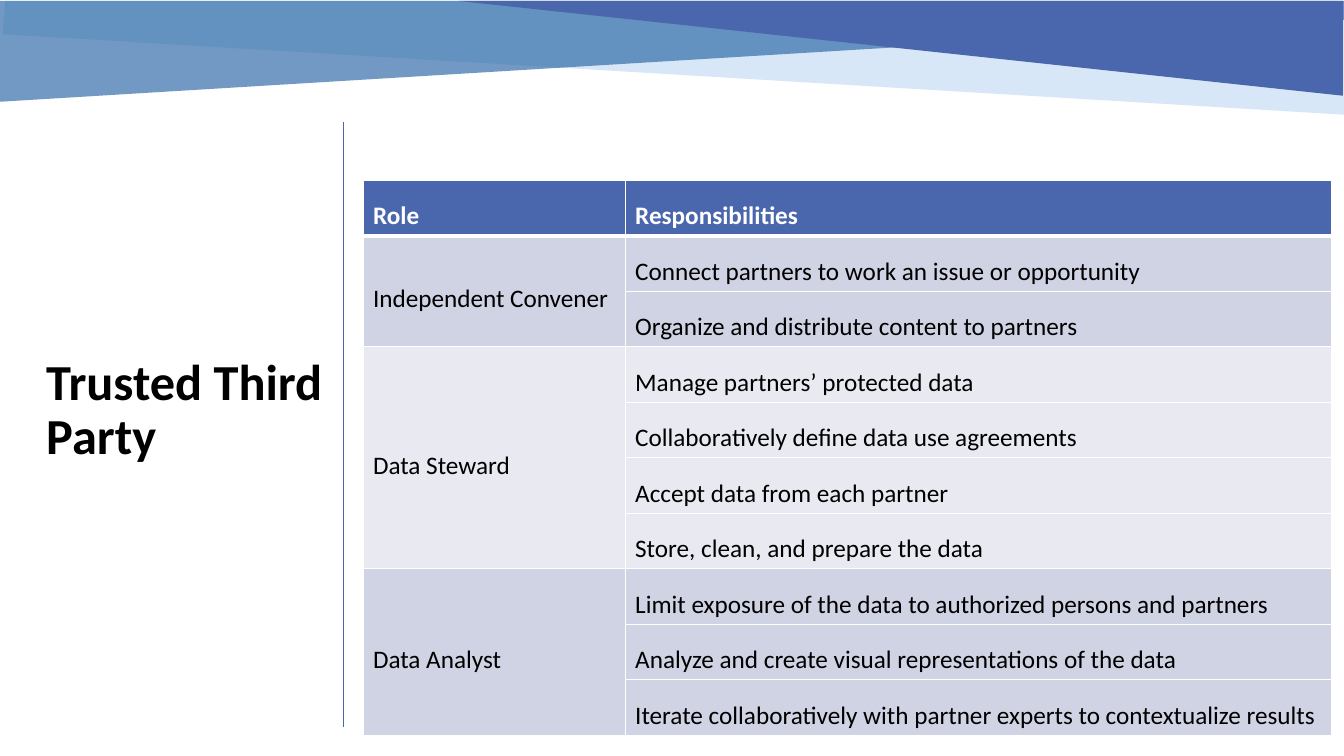
from dataclasses import dataclass

from lxml import etree
from pptx import Presentation
from pptx import util as u
from pptx.dml.color import RGBColor
from pptx.enum import shapes, text
from pptx.oxml import ns

FONT = "Calibri"
BLACK = RGBColor(0x00, 0x00, 0x00)
WHITE = RGBColor(0xFF, 0xFF, 0xFF)
INDIGO = RGBColor(0x4A, 0x66, 0xAC)
SKY = RGBColor(0x7E, 0xB2, 0xE6)
OCEAN = RGBColor(0x1F, 0x5F, 0xA0)
LAVENDER = RGBColor(0xD0, 0xD3, 0xE3)
PALE = RGBColor(0xE9, 0xEA, 0xF1)

COLUMN_WIDTHS = (2.6, 7.01)
ROW_HEIGHT = 0.41


@dataclass(frozen=True)
class Ribbon:
    points: tuple[tuple[float, float], ...]
    color: RGBColor
    opacity: int = 100


@dataclass(frozen=True)
class Role:
    title: str
    duties: tuple[str, ...]
    fill: RGBColor


RIBBONS = (
    Ribbon(((0.05, 0.01), (13.36, 0.01), (13.36, 1.14), (0.03, 0.34)), SKY, 30),
    Ribbon(((13.33, 0.01), (0, 0.01), (0, 1.01), (13.33, 0.2)), OCEAN, 63),
    Ribbon(((4.55, 0.01), (13.32, 0.01), (13.32, 0.95)), INDIGO),
)

ROLES = (
    Role("Independent Convener", (
        "Connect partners to work an issue or opportunity",
        "Organize and distribute content to partners",
    ), LAVENDER),
    Role("Data Steward", (
        "Manage partners’ protected data",
        "Collaboratively define data use agreements",
        "Accept data from each partner",
        "Store, clean, and prepare the data",
    ), PALE),
    Role("Data Analyst", (
        "Limit exposure of the data to authorized persons and partners",
        "Analyze and create visual representations of the data",
        "Iterate collaboratively with partner experts to contextualize results",
    ), LAVENDER),
)


def write(frame, words: str, *, size: float, color: RGBColor = BLACK,
          bold: bool = False, spacing: float = 1.0) -> None:
    paragraph = frame.paragraphs[0]
    paragraph.line_spacing = spacing
    run = paragraph.add_run()
    run.text = words
    run.font.name = FONT
    run.font.size = u.Pt(size)
    run.font.bold = bold
    run.font.color.rgb = color


def draw_ribbon(slide, ribbon: Ribbon) -> None:
    corners = [(u.Inches(x), u.Inches(y)) for x, y in ribbon.points]
    builder = slide.shapes.build_freeform(*corners[0])
    builder.add_line_segments(corners[1:], close=True)
    band = builder.convert_to_shape()
    band.shadow.inherit = False
    band.line.fill.background()
    band.fill.solid()
    band.fill.fore_color.rgb = ribbon.color
    if ribbon.opacity < 100:
        tint = band.fill._xPr.find(".//" + ns.qn("a:srgbClr"))
        etree.SubElement(tint, ns.qn("a:alpha"), val=str(ribbon.opacity * 1000))


def draw_divider(slide) -> None:
    divider = slide.shapes.add_connector(
        shapes.MSO_CONNECTOR.STRAIGHT,
        u.Inches(3.41), u.Inches(1.21), u.Inches(3.41), u.Inches(7.21))
    divider.line.color.rgb = INDIGO
    divider.line.width = u.Pt(0.5)
    etree.SubElement(divider._element.spPr, ns.qn("a:effectLst"))


def style_cell(cell, fill: RGBColor, top: float = 1, bottom: float = 1) -> None:
    properties = cell._tc.get_or_add_tcPr()
    for side, width in (("L", 1), ("R", 1), ("T", top), ("B", bottom)):
        border = etree.SubElement(properties, ns.qn(f"a:ln{side}"), w=str(u.Pt(width)))
        solid = etree.SubElement(border, ns.qn("a:solidFill"))
        etree.SubElement(solid, ns.qn("a:srgbClr"), val=str(WHITE))
    cell.fill.solid()
    cell.fill.fore_color.rgb = fill
    cell.vertical_anchor = text.MSO_ANCHOR.MIDDLE


def draw_roles(slide) -> None:
    row_count = 1 + sum(len(role.duties) for role in ROLES)
    grid = slide.shapes.add_table(
        row_count, len(COLUMN_WIDTHS), u.Inches(3.6), u.Inches(1.79),
        u.Inches(sum(COLUMN_WIDTHS)), u.Inches(ROW_HEIGHT * row_count)).table
    grid.horz_banding = False
    for column, width in zip(grid.columns, COLUMN_WIDTHS):
        column.width = u.Inches(width)
    for row in grid.rows:
        row.height = u.Inches(ROW_HEIGHT)

    for column, heading in enumerate(("Role", "Responsibilities")):
        cell = grid.cell(0, column)
        style_cell(cell, INDIGO, bottom=3)
        write(cell.text_frame, heading, size=18, color=WHITE, bold=True, spacing=1.5)

    first = 1
    for role in ROLES:
        last = first + len(role.duties) - 1
        for row, duty in enumerate(role.duties, first):
            for column in range(len(COLUMN_WIDTHS)):
                style_cell(grid.cell(row, column), role.fill, top=3 if row == 1 else 1)
            write(grid.cell(row, 1).text_frame, duty, size=18, spacing=1.5)
        grid.cell(first, 0).merge(grid.cell(last, 0))
        write(grid.cell(first, 0).text_frame, role.title, size=18, spacing=1.5)
        first = last + 1


def main() -> None:
    deck = Presentation()
    deck.slide_width = u.Inches(13.33)
    deck.slide_height = u.Inches(7.5)
    slide = deck.slides.add_slide(deck.slide_layouts[6])
    for ribbon in RIBBONS:
        draw_ribbon(slide, ribbon)
    title = slide.shapes.add_textbox(
        u.Inches(0.36), u.Inches(3.49), u.Inches(3.05), u.Inches(1.19)).text_frame
    title.word_wrap = True
    write(title, "Trusted Third Party", size=36, bold=True, spacing=0.9)
    draw_divider(slide)
    draw_roles(slide)
    deck.save("out.pptx")


if __name__ == "__main__":
    main()
